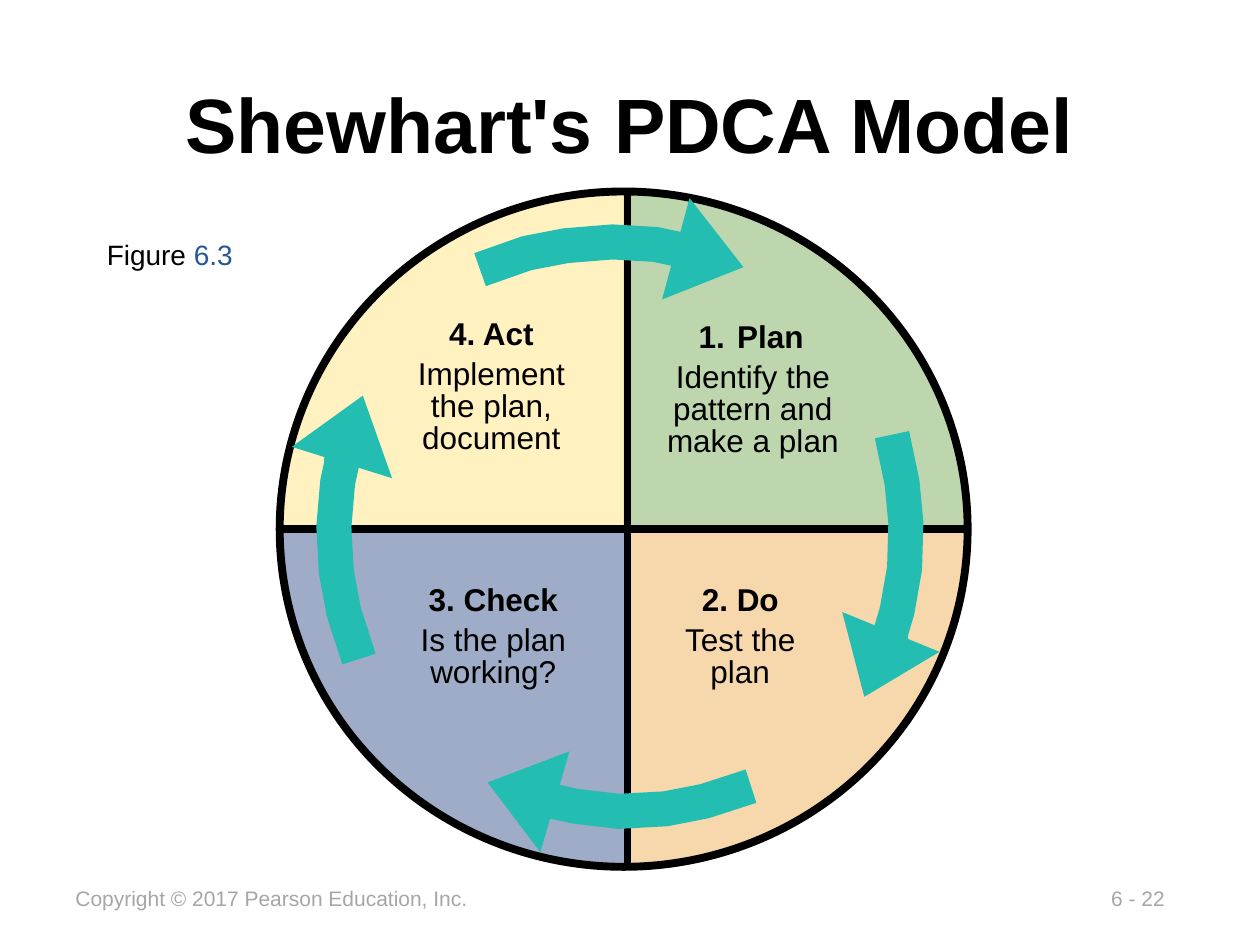
from dataclasses import dataclass
from math import cos, pi, sin

from lxml.etree import SubElement
from pptx import Presentation
from pptx.dml.color import RGBColor
from pptx.enum.shapes import MSO_CONNECTOR, MSO_SHAPE
from pptx.enum.text import MSO_ANCHOR, MSO_AUTO_SIZE, PP_ALIGN
from pptx.oxml.ns import qn
from pptx.util import Inches, Pt


@dataclass(frozen=True)
class Theme:
    """Colours, type sizes and line widths of the slide."""
    font: str = "Arial"
    ink: str = "000000"
    muted: str = "A6A6A6"
    accent: str = "255898"
    arrow: str = "24BDB2"
    act: str = "FFF1C0"
    do: str = "F7D7AC"
    check: str = "9FACC7"
    plan: str = "BDD6AE"
    title_size: float = 44
    body_size: float = 18
    label_size: float = 16
    footer_size: float = 12
    outline: float = 4.5
    arrow_width: float = 20


class SlideBuilder:
    """Draws styled elements on the current slide."""

    def __init__(self, slide, theme):
        self.slide = slide
        self.theme = theme

    def format_font(self, font, size, color, bold=False):
        """Apply typeface, size, weight and colour."""
        values = {"name": self.theme.font, "size": Pt(size), "bold": bold}
        for name, value in values.items():
            setattr(font, name, value)
        font.color.rgb = RGBColor.from_string(color)

    def format_line(self, shape, color, width):
        """Give a shape or connector a solid line."""
        shape.line.color.rgb = RGBColor.from_string(color)
        shape.line.width = Pt(width)

    def title(self, text, box):
        """Place and format the title placeholder."""
        title = self.slide.shapes.title
        for name, value in zip(("left", "top", "width", "height"), box):
            setattr(title, name, Inches(value))
        title.text_frame.text = text
        title.text_frame.vertical_anchor = MSO_ANCHOR.MIDDLE
        paragraph = title.text_frame.paragraphs[0]
        paragraph.alignment = PP_ALIGN.CENTER
        self.format_font(paragraph.runs[0].font, self.theme.title_size, self.theme.ink, True)

    def text_box(self, box, wrap):
        """Add an empty text box and return its frame."""
        frame = self.slide.shapes.add_textbox(*map(Inches, box)).text_frame
        frame.word_wrap = wrap
        frame.auto_size = MSO_AUTO_SIZE.SHAPE_TO_FIT_TEXT
        return frame

    def label(self, box, size, *runs):
        """Add one line of text made of coloured runs."""
        paragraph = self.text_box(box, False).paragraphs[0]
        for text, color in runs:
            run = paragraph.add_run()
            run.text = text
            self.format_font(run.font, size, color)

    def step(self, box, heading, detail, numbered=False):
        """Add a bold heading above a centred description."""
        frame = self.text_box(box, True)
        first, second = frame.paragraphs[0], frame.add_paragraph()
        if numbered:
            properties = first._p.get_or_add_pPr()
            SubElement(properties, qn("a:buAutoNum"), type="arabicPeriod")
        second.space_before = Pt(self.theme.body_size / 4)
        for paragraph, text, bold in ((first, heading, True), (second, detail, False)):
            paragraph.alignment = PP_ALIGN.CENTER
            paragraph.line_spacing = 0.85
            self.format_font(paragraph.font, self.theme.body_size, self.theme.ink, bold)
            run = paragraph.add_run()
            run.text = text
            self.format_font(run.font, self.theme.body_size, self.theme.ink, bold)

    def outline(self, points, close):
        """Build a freeform through points given in inches."""
        points = [(Inches(x), Inches(y)) for x, y in points]
        builder = self.slide.shapes.build_freeform(*points[0])
        builder.add_line_segments(points[1:], close=close)
        shape = builder.convert_to_shape()
        shape.shadow.inherit = False
        return shape

    def polygon(self, points, color):
        """Add a filled outline without a line."""
        shape = self.outline(points, True)
        shape.fill.solid()
        shape.fill.fore_color.rgb = RGBColor.from_string(color)
        shape.line.fill.background()

    def quadrant(self, corner, radii, signs, color):
        """Add a quarter of an ellipse around its corner."""
        steps = 24
        angles = [pi / 2 * index / steps for index in range(steps + 1)]
        arc = [(corner[0] + signs[0] * radii[0] * cos(angle),
                corner[1] + signs[1] * radii[1] * sin(angle)) for angle in angles]
        self.polygon([corner] + arc, color)

    def ring(self, box):
        """Add the unfilled outer ellipse."""
        shape = self.slide.shapes.add_shape(MSO_SHAPE.OVAL, *map(Inches, box))
        shape.shadow.inherit = False
        shape.fill.background()
        self.format_line(shape, self.theme.ink, self.theme.outline)

    def divider(self, start, end):
        """Add a straight line between two points."""
        connector = self.slide.shapes.add_connector(
            MSO_CONNECTOR.STRAIGHT, *map(Inches, start + end))
        SubElement(connector._element.spPr, qn("a:effectLst"))
        self.format_line(connector, self.theme.ink, self.theme.outline)

    def arrow(self, points, patch):
        """Add a curved arrow and the patch joining its head."""
        shape = self.outline(points, False)
        shape.fill.background()
        self.format_line(shape, self.theme.arrow, self.theme.arrow_width)
        line = shape.line._get_or_add_ln()
        SubElement(line, qn("a:round"))
        SubElement(line, qn("a:tailEnd"), type="triangle", w="med", len="sm")
        self.polygon(patch, self.theme.arrow)


def main():
    """Build and save the slide."""
    presentation = Presentation()
    presentation.slide_width, presentation.slide_height = Inches(10), Inches(7.5)
    theme = Theme()
    slide = presentation.slides.add_slide(presentation.slide_layouts[5])
    builder = SlideBuilder(slide, theme)

    builder.label((8.72, 6.98, 0.65, 0.3), theme.footer_size, ("6 - 22", theme.muted))
    builder.label((0.5, 6.98, 3.35, 0.3), theme.footer_size,
                  ("Copyright © 2017 Pearson Education, Inc.", theme.muted))

    quadrants = [
        ((4.97, 4.19), (2.75, 2.69), (-1, -1), theme.act,
         (3.06, 2.49, 1.68, 1.21), "4. Act", "Implement the plan, document", False),
        ((4.98, 4.21), (2.67, 2.65), (1, 1), theme.do,
         (5.07, 4.6, 1.61, 0.96), "2. Do", "Test the plan", False),
        ((5, 4.19), (2.77, 2.69), (-1, 1), theme.check,
         (2.97, 4.6, 1.89, 0.96), "3. Check", "Is the plan working?", False),
        ((4.95, 4.2), (2.75, 2.69), (1, -1), theme.plan,
         (4.92, 2.51, 2.11, 1.21), " Plan", "Identify the pattern and make a plan", True),
    ]
    for corner, radii, signs, color, box, heading, detail, numbered in quadrants:
        builder.quadrant(corner, radii, signs, color)
        builder.step(box, heading, detail, numbered)

    builder.title("Shewhart's PDCA Model", (0.75, 0.48, 8.5, 0.99))
    builder.ring((2.22, 1.52, 5.46, 5.36))
    builder.divider((2.22, 4.2), (7.69, 4.2))
    builder.divider((4.98, 1.52), (4.98, 6.88))
    builder.label((0.75, 1.84, 1.25, 0.37), theme.label_size,
                  ("Figure ", theme.ink), ("6.3", theme.accent))

    arrows = [
        ([(7.08, 3.45), (7.16, 3.83), (7.19, 4.15), (7.18, 4.51), (7.12, 4.85),
          (7.01, 5.22), (6.86, 5.53)],
         [(7.21, 5.06), (7.16, 5.2), (7.01, 5.17), (7.08, 4.98)]),
        ([(3.81, 2.14), (4.18, 2.01), (4.49, 1.95), (4.86, 1.92), (5.2, 1.94),
          (5.58, 2.02), (5.9, 2.12)],
         [(5.58, 1.87), (5.49, 2.06), (5.35, 2.03), (5.42, 1.84)]),
        ([(2.85, 5.23), (2.73, 4.86), (2.67, 4.54), (2.65, 4.18), (2.68, 3.83),
          (2.76, 3.46), (2.88, 3.14)],
         [(2.77, 3.55), (2.72, 3.69), (2.57, 3.66), (2.61, 3.44)]),
        ([(5.96, 6.24), (5.59, 6.36), (5.28, 6.42), (4.91, 6.44), (4.57, 6.4),
          (4.2, 6.32), (3.87, 6.21)],
         [(4.41, 6.37), (4.36, 6.51), (4.2, 6.48), (4.28, 6.28)]),
    ]
    for points, patch in arrows:
        builder.arrow(points, patch)
    presentation.save("out.pptx")


if __name__ == "__main__":
    main()
